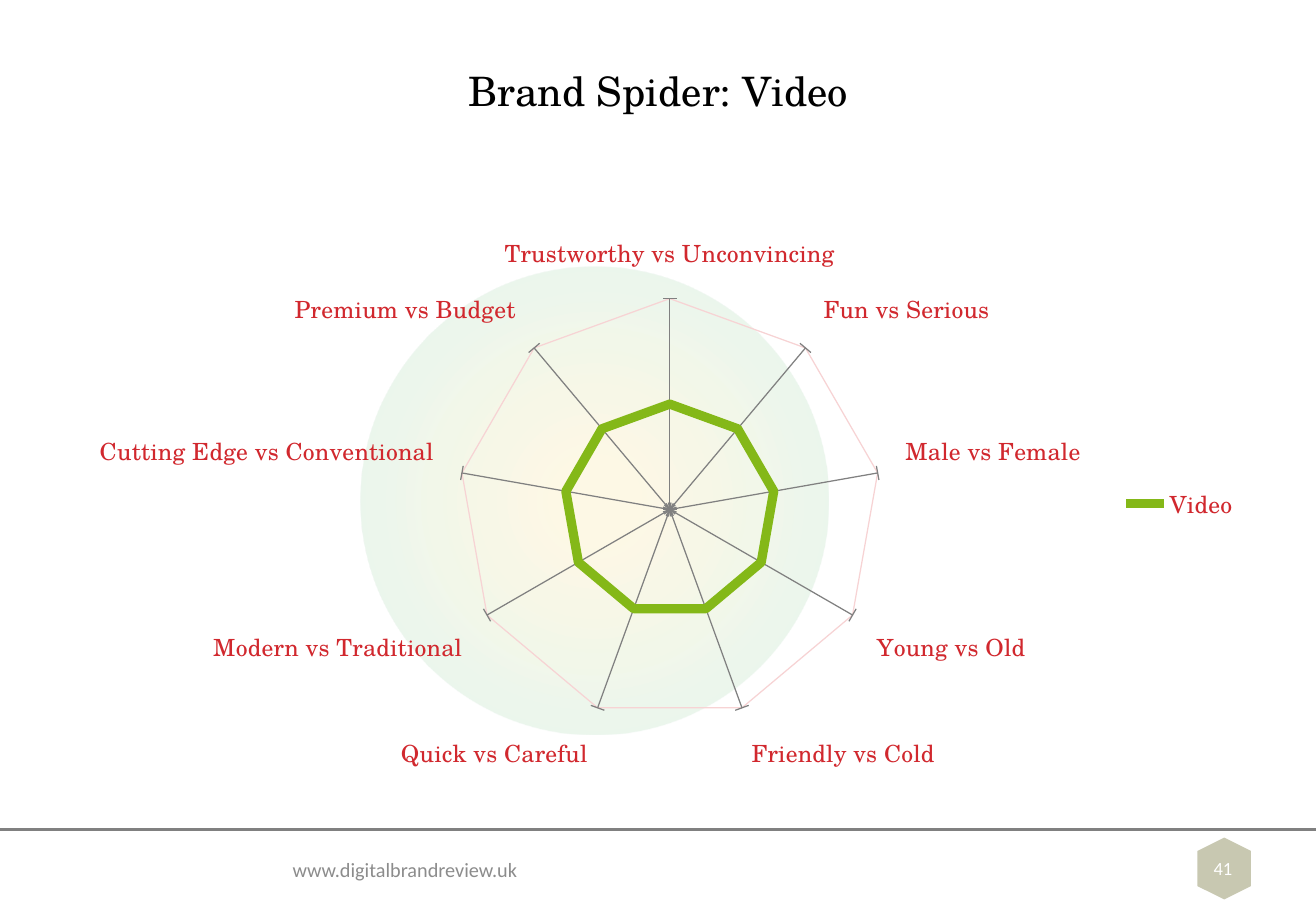
from lxml import etree
from pptx import Presentation
from pptx.chart.data import CategoryChartData
from pptx.dml.color import RGBColor
from pptx.enum.chart import XL_CHART_TYPE, XL_LEGEND_POSITION, XL_TICK_LABEL_POSITION, XL_TICK_MARK
from pptx.enum.shapes import MSO_CONNECTOR, MSO_SHAPE
from pptx.enum.text import MSO_ANCHOR, PP_ALIGN
from pptx.oxml import parse_xml
from pptx.oxml.ns import nsdecls, qn
from pptx.util import Inches, Pt

SERIF = "TeX Gyre Schola"
SANS = "Calibri"
GREY = "808080"
RED = "D1282E"
GREEN = "84B818"
TRAITS = [
    "Trustworthy vs Unconvincing", "Fun vs Serious", "Male vs Female",
    "Young vs Old", "Friendly vs Cold", "Quick vs Careful",
    "Modern vs Traditional", "Cutting Edge vs Conventional", "Premium vs Budget",
]


def color(hex_code):
    """Turn a hex string into a colour."""
    return RGBColor.from_string(hex_code)


def box(left, top, width, height):
    """Return a position and size in inches."""
    return Inches(left), Inches(top), Inches(width), Inches(height)


def style_font(font, name, size, hex_code):
    """Set the typeface, size and colour of a font."""
    font.name = name
    font.size = Pt(size)
    font.color.rgb = color(hex_code)


def style_line(line, hex_code, width):
    """Set the colour and width of a line."""
    line.color.rgb = color(hex_code)
    line.width = Pt(width)


def add_text(slide, position, text, *, font, size, hex_code, align=PP_ALIGN.LEFT):
    """Add a vertically centred line of text."""
    frame = slide.shapes.add_textbox(*position).text_frame
    frame.word_wrap = True
    frame.vertical_anchor = MSO_ANCHOR.MIDDLE
    paragraph = frame.paragraphs[0]
    paragraph.alignment = align
    run = paragraph.add_run()
    run.text = text
    style_font(run.font, font, size, hex_code)


def add_plain_shape(slide, kind, position, hex_code):
    """Add a filled preset shape without outline or shadow."""
    shape = slide.shapes.add_shape(kind, *position)
    shape.shadow.inherit = False
    shape.fill.solid()
    shape.fill.fore_color.rgb = color(hex_code)
    shape.line.fill.background()
    return shape


def add_glow(slide, position, stops):
    """Add a circle with a faint radial gradient given as (percent, colour) stops."""
    shape = add_plain_shape(slide, MSO_SHAPE.OVAL, position, stops[0][1])
    stop_xml = "".join(
        f'<a:gs pos="{percent * 1000}"><a:srgbClr val="{hex_code}">'
        f'<a:alpha val="10000"/></a:srgbClr></a:gs>'
        for percent, hex_code in stops
    )
    gradient = parse_xml(
        f'<a:gradFill {nsdecls("a")} rotWithShape="1"><a:gsLst>{stop_xml}</a:gsLst>'
        '<a:path path="circle"><a:fillToRect l="50000" t="50000" r="50000" b="50000"/>'
        "</a:path></a:gradFill>"
    )
    properties = shape.element.spPr
    properties.replace(properties.find(qn("a:solidFill")), gradient)


def add_rule(slide, top, width):
    """Add the horizontal line above the footer."""
    connector = slide.shapes.add_connector(
        MSO_CONNECTOR.STRAIGHT, 0, Inches(top), Inches(width), Inches(top))
    style_line(connector.line, GREY, 2)
    etree.SubElement(connector.element.spPr, qn("a:effectLst"))


def set_plot_layout(chart, **fractions):
    """Fix the inner plot area as fractions of the chart."""
    modes = '<c:layoutTarget val="inner"/><c:xMode val="edge"/><c:yMode val="edge"/>'
    values = "".join(f'<c:{key} val="{value}"/>' for key, value in fractions.items())
    layout = parse_xml(
        f'<c:layout {nsdecls("c")}><c:manualLayout>{modes}{values}</c:manualLayout></c:layout>')
    plot_area = chart.element.find(".//" + qn("c:plotArea"))
    for previous in plot_area.findall(qn("c:layout")):
        plot_area.remove(previous)
    plot_area.insert(0, layout)


def add_spider(slide, position):
    """Add the radar chart of brand traits."""
    data = CategoryChartData()
    data.categories = TRAITS
    data.add_series("Video", [100] * len(TRAITS))
    chart = slide.shapes.add_chart(XL_CHART_TYPE.RADAR, *position, data).chart
    style_font(chart.font, SERIF, 14, RED)
    chart.has_title = False
    chart.has_legend = True
    chart.legend.position = XL_LEGEND_POSITION.RIGHT
    chart.legend.include_in_layout = False
    plot = chart.plots[0]
    plot.vary_by_categories = False
    style_line(plot.series[0].format.line, GREEN, 5.5)

    traits = chart.category_axis
    traits.major_tick_mark = XL_TICK_MARK.NONE
    traits.has_major_gridlines = True
    style_line(traits.major_gridlines.format.line, GREY, 0.75)

    scale = chart.value_axis
    scale.minimum_scale, scale.maximum_scale, scale.major_unit = 0, 200, 200
    scale.tick_label_position = XL_TICK_LABEL_POSITION.NONE
    scale.major_tick_mark = XL_TICK_MARK.CROSS
    scale.has_major_gridlines = True
    style_line(scale.major_gridlines.format.line, "F7D3D4", 0.75)
    style_line(scale.format.line, GREY, 0.75)
    set_plot_layout(chart, x=0.33, y=0.17, w=0.36, h=0.68)


def main():
    """Build the brand spider slide."""
    presentation = Presentation()
    presentation.slide_width = Inches(10.83)
    presentation.slide_height = Inches(7.5)
    slide = presentation.slides.add_slide(presentation.slide_layouts[6])

    hexagon = add_plain_shape(slide, MSO_SHAPE.HEXAGON, box(9.82, 6.93, 0.51, 0.44), "C8C8B1")
    hexagon.rotation = 270
    add_rule(slide, 6.83, 10.83)
    add_glow(slide, box(2.97, 2.2, 3.85, 3.85), [(13, "F5C201"), (89, "009966")])
    add_text(slide, box(0.54, 0.13, 9.75, 1.23), "Brand Spider: Video",
             font=SERIF, size=24, hex_code="000000", align=PP_ALIGN.CENTER)
    add_text(slide, box(2.31, 6.93, 7.28, 0.45), "www.digitalbrandreview.uk",
             font=SANS, size=12, hex_code="8C8C8C")
    add_text(slide, box(9.78, 6.95, 0.57, 0.4), "41",
             font=SANS, size=11, hex_code="FFFFFF", align=PP_ALIGN.CENTER)
    add_spider(slide, box(0.54, 1.59, 9.75, 5.11))
    presentation.save("out.pptx")


if __name__ == "__main__":
    main()
